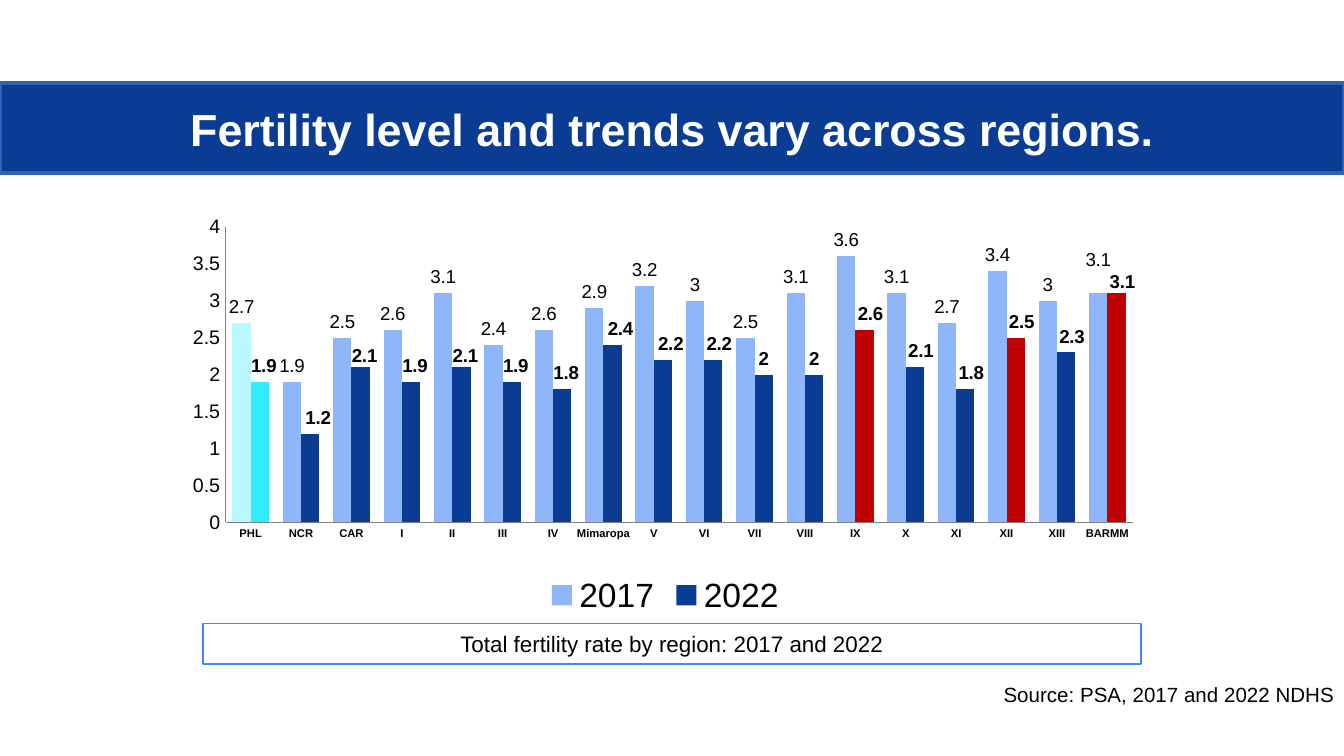
from lxml import etree
from pptx import Presentation
from pptx.chart.data import CategoryChartData
from pptx.dml.color import RGBColor
from pptx.enum.chart import XL_CHART_TYPE, XL_LABEL_POSITION, XL_LEGEND_POSITION, XL_TICK_MARK
from pptx.enum.shapes import MSO_SHAPE
from pptx.enum.text import MSO_ANCHOR, PP_ALIGN
from pptx.oxml.ns import qn
from pptx.util import Inches, Pt

RECTANGLE = MSO_SHAPE.RECTANGLE
CENTER, RIGHT = PP_ALIGN.CENTER, PP_ALIGN.RIGHT
MIDDLE = MSO_ANCHOR.MIDDLE
COLUMNS = XL_CHART_TYPE.COLUMN_CLUSTERED
OUTSIDE_END = XL_LABEL_POSITION.OUTSIDE_END
BOTTOM = XL_LEGEND_POSITION.BOTTOM
NO_TICK = XL_TICK_MARK.NONE

CELL = 0.1
NAVY, SKY, RED = "093C92", "8EB6F8", "C00000"
REGIONS = ["PHL", "NCR", "CAR", "I", "II", "III", "IV", "Mimaropa", "V", "VI",
           "VII", "VIII", "IX", "X", "XI", "XII", "XIII", "BARMM"]
RATES_2017 = [2.7, 1.9, 2.5, 2.6, 3.1, 2.4, 2.6, 2.9, 3.2, 3,
              2.5, 3.1, 3.6, 3.1, 2.7, 3.4, 3, 3.1]
RATES_2022 = [1.9, 1.2, 2.1, 1.9, 2.1, 1.9, 1.8, 2.4, 2.2, 2.2,
              2, 2, 2.6, 2.1, 1.8, 2.5, 2.3, 3.1]
SHIFTS_2017 = {17: (0, -0.04)}
SHIFTS_2022 = {
    index: (0.008 if index in (1, 7, 8) else 0.004 if index < 7 else 0.006,
            0.01 if index in (2, 4, 17) else 0)
    for index in range(len(REGIONS)) if index not in (10, 11)
}


def color(value):
    return RGBColor.from_string(value)


def style_font(font, size, ink="000000", bold=False):
    font.name = "Arial"
    font.size = Pt(size)
    font.bold = bold
    font.color.rgb = color(ink)


def write(box, text, size=12, ink="000000", bold=False, align=CENTER, inset=(0.07, 0.04)):
    frame = box.text_frame
    frame.word_wrap = True
    frame.vertical_anchor = MIDDLE
    frame.margin_left = frame.margin_right = Inches(inset[0])
    frame.margin_top = frame.margin_bottom = Inches(inset[1])
    para = frame.paragraphs[0]
    para.alignment = align
    span = para.add_run()
    span.text = text
    style_font(span.font, size, ink, bold)


def add_layout(parent, position, **values):
    layout = etree.Element(qn("c:layout"))
    manual = etree.SubElement(layout, qn("c:manualLayout"))
    for name, value in values.items():
        etree.SubElement(manual, qn(f"c:{name}")).set("val", str(value))
    old = parent.find(qn("c:layout"))
    if old is not None:
        parent.remove(old)
    parent.insert(position, layout)


class SlideBuilder:
    def __init__(self, deck):
        self.page = deck.slides.add_slide(deck.slide_layouts[6])

    def place(self, column, row, columns, rows):
        return [Inches(cells * CELL) for cells in (column, row, columns, rows)]

    def panel(self, area, fill=None, line=None, width=1):
        box = self.page.shapes.add_shape(RECTANGLE, *self.place(*area))
        box.shadow.inherit = False
        if fill:
            box.fill.solid()
            box.fill.fore_color.rgb = color(fill)
        else:
            box.fill.background()
        if line:
            box.line.color.rgb = color(line)
            box.line.width = Pt(width)
        else:
            box.line.fill.background()
        return box

    def label(self, area, text, **style):
        write(self.page.shapes.add_textbox(*self.place(*area)), text, **style)

    def columns(self, area, categories, series):
        data = CategoryChartData()
        data.categories = categories
        for name, values in series:
            data.add_series(name, values)
        chart = self.page.shapes.add_chart(COLUMNS, *self.place(*area), data).chart
        style_font(chart.font, 18)
        chart.has_title = False
        chart.has_legend = True
        chart.legend.position = BOTTOM
        chart.legend.include_in_layout = False
        style_font(chart.legend.font, 18)
        self.axis(chart.category_axis, 6, True)
        self.axis(chart.value_axis, 10.5)
        chart.value_axis.minimum_scale = 0
        chart.value_axis.maximum_scale = 4
        chart.value_axis.major_unit = 0.5
        plot = chart.plots[0]
        plot.gap_width = 75
        plot.overlap = 0
        plot.vary_by_categories = False
        add_layout(chart._chartSpace.find(".//" + qn("c:plotArea")), 0,
                   layoutTarget="inner", xMode="edge", yMode="edge",
                   x=0.053, y=0.106, w=0.922, h=0.671)
        return plot

    def axis(self, axis, size, bold=False):
        axis.has_major_gridlines = False
        axis.major_tick_mark = axis.minor_tick_mark = NO_TICK
        axis.format.line.color.rgb = color("808080")
        style_font(axis.tick_labels.font, size, bold=bold)

    def bars(self, series, fill, accents, shifts, bold=False):
        series.format.fill.solid()
        series.format.fill.fore_color.rgb = color(fill)
        for index, accent in accents.items():
            point_fill = series.points[index].format.fill
            point_fill.solid()
            point_fill.fore_color.rgb = color(accent)
        labels = series.data_labels
        labels.show_value = True
        labels.position = OUTSIDE_END
        style_font(labels.font, 10, bold=bold)
        for index in shifts:
            label = series.points[index].data_label
            style_font(label.font, 10, bold=bold)
            label.position = OUTSIDE_END
        for entry in series._element.iter(qn("c:dLbl")):
            x, y = shifts[int(entry.find(qn("c:idx")).get("val"))]
            add_layout(entry, 1, x=x, y=y)
        for leader in series._element.iter(qn("c:showLeaderLines")):
            leader.set("val", "0")


def main():
    deck = Presentation()
    deck.slide_width, deck.slide_height = Inches(10), Inches(10 * 9 / 16)
    slide = SlideBuilder(deck)
    slide.panel((0, 6.2, 100, 6.7), NAVY, "3061B2", 2)
    title = slide.panel((0.5, 7.2, 99, 4.8), NAVY)
    write(title, "Fertility level and trends vary across regions.",
          size=24, ink="FFFFFF", bold=True)
    plot = slide.columns((12.9, 13.4, 73.2, 32.8), REGIONS,
                         [("2017", RATES_2017), ("2022", RATES_2022)])
    earlier, later = plot.series
    slide.bars(earlier, SKY, {0: "BAF8FF"}, SHIFTS_2017)
    slide.bars(later, NAVY, {0: "31EBFF", 12: RED, 15: RED, 17: RED}, SHIFTS_2022, bold=True)
    caption = slide.panel((15.1, 46.4, 69.8, 3), line="4285F4", width=0.75)
    write(caption, "Total fertility rate by region: 2017 and 2022", inset=(0.1, 0.05))
    slide.label((50, 50.4, 50, 2.6), "Source: PSA, 2017 and 2022 NDHS", size=11, align=RIGHT)
    deck.save("out.pptx")


if __name__ == "__main__":
    main()
